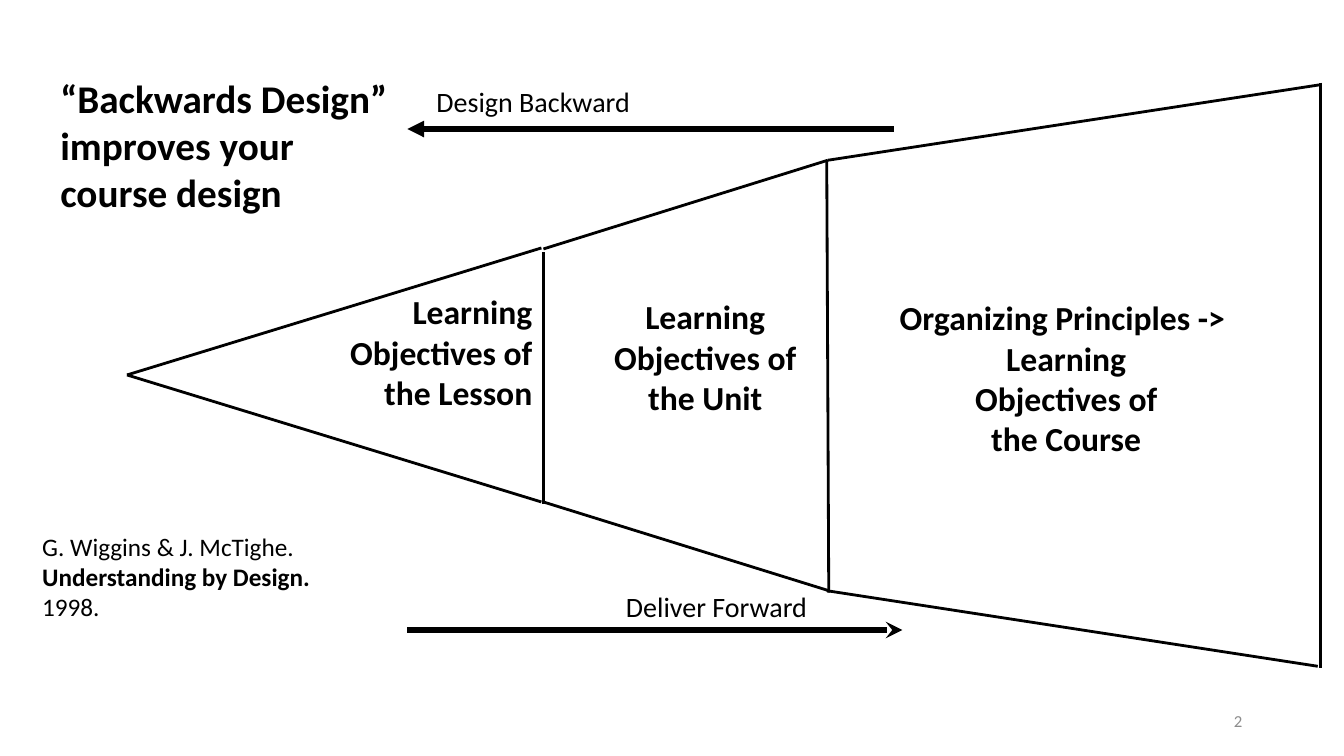
from lxml.etree import SubElement
from pptx import Presentation
from pptx.dml.color import RGBColor
from pptx.enum.shapes import MSO_CONNECTOR
from pptx.enum.text import MSO_ANCHOR, MSO_AUTO_SIZE, PP_ALIGN
from pptx.oxml.ns import qn
from pptx.util import Inches, Pt

BLACK = RGBColor(0x00, 0x00, 0x00)
GRAY = RGBColor(0x8C, 0x8C, 0x8C)
FONT = "Calibri"

TITLE = "“Backwards Design” improves your course design"
CREDIT = [("G. Wiggins & J. McTighe. ", False),
          ("Understanding by Design. ", True),
          ("1998.", False)]
PAGE_NUMBER = "2"

# Each stage: left, top, width, height, alignment, lines
STAGES = [
    (3.35, 2.84, 2.03, 1.31, PP_ALIGN.RIGHT,
     ["Learning", "Objectives of", "the Lesson"]),
    (5.98, 2.89, 2.03, 1.31, PP_ALIGN.CENTER,
     ["Learning", "Objectives of", "the Unit"]),
    (8.81, 2.9, 3.53, 1.72, PP_ALIGN.CENTER,
     ["Organizing Principles -> ", "Learning", "Objectives of", "the Course"]),
]

# Each edge: start x, start y, end x, end y
FUNNEL_EDGES = [
    (1.26, 3.72, 5.37, 2.46), (1.26, 3.72, 5.37, 4.98),
    (5.39, 2.5, 5.39, 5), (5.39, 2.47, 8.21, 1.59), (5.39, 4.98, 8.22, 5.86),
    (8.2, 1.6, 8.22, 5.88), (8.21, 1.59, 13.1, 0.84), (8.2, 5.86, 13.07, 6.61),
    (13.1, 0.82, 13.1, 6.63),
]

# Each direction: label, label box, arrow ends, arrowhead tag, arrowhead type
DIRECTIONS = [
    ("Deliver Forward", (6.11, 5.8, 2.2, 0.43), (4.04, 6.25, 8.95, 6.25),
     "a:tailEnd", "stealth"),
    ("Design Backward", (4.23, 0.79, 2.36, 0.43), (4.04, 1.28, 8.87, 1.28),
     "a:headEnd", "triangle"),
]


def add_text(slide, box, paragraphs, size, color=BLACK, align=PP_ALIGN.LEFT,
             wrap=True, grow=True, anchor=MSO_ANCHOR.TOP):
    """Add a text box; each paragraph is a list of (text, bold) runs."""
    tf = slide.shapes.add_textbox(*map(Inches, box)).text_frame
    tf.word_wrap = wrap
    tf.auto_size = MSO_AUTO_SIZE.SHAPE_TO_FIT_TEXT if grow else MSO_AUTO_SIZE.NONE
    tf.vertical_anchor = anchor
    for i, runs in enumerate(paragraphs):
        p = tf.add_paragraph() if i else tf.paragraphs[0]
        p.alignment = align
        for text, bold in runs:
            r = p.add_run()
            r.text = text
            r.font.name = FONT
            r.font.size = Pt(size)
            r.font.bold = bold
            r.font.color.rgb = color


def add_line(slide, ends, width):
    line = slide.shapes.add_connector(MSO_CONNECTOR.STRAIGHT, *map(Inches, ends))
    line.line.color.rgb = BLACK
    line.line.width = Pt(width)
    SubElement(line._element.spPr, qn("a:effectLst"))
    return line


def main():
    prs = Presentation()
    prs.slide_width, prs.slide_height = Inches(13.33), Inches(7.5)
    s = prs.slides.add_slide(prs.slide_layouts[6])

    add_text(s, (0.5, 0.69, 3.49, 1.51), [[(TITLE, True)]], 28)
    for edge in FUNNEL_EDGES:
        add_line(s, edge, 2)
    for *box, align, lines in STAGES:
        add_text(s, box, [[(text, True)] for text in lines], 24,
                 align=align, wrap=False)
    for label, box, ends, tag, head in DIRECTIONS:
        add_text(s, box, [[(label, False)]], 20)
        arrow = add_line(s, ends, 4)
        SubElement(arrow.line._get_or_add_ln(), qn(tag), type=head)
    add_text(s, (0.32, 5.22, 3.09, 1.01), [CREDIT], 18)
    add_text(s, (9.42, 6.95, 3, 0.4), [[(PAGE_NUMBER, False)]], 12, GRAY,
             PP_ALIGN.RIGHT, grow=False, anchor=MSO_ANCHOR.MIDDLE)

    prs.save("out.pptx")


if __name__ == "__main__":
    main()
